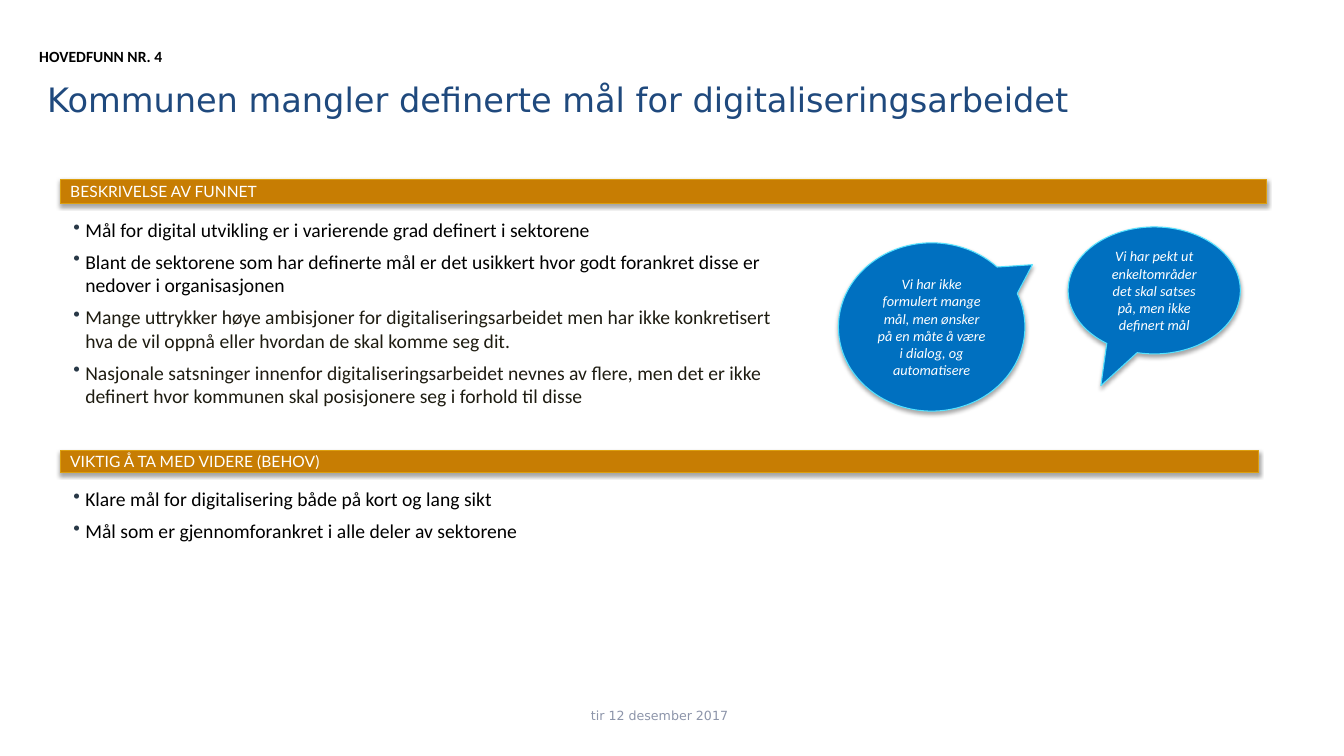
from dataclasses import dataclass

from lxml.etree import SubElement
from pptx import Presentation
from pptx.dml.color import RGBColor
from pptx.enum.shapes import MSO_SHAPE as Preset
from pptx.enum.text import MSO_ANCHOR as Anchor, MSO_AUTO_SIZE as AutoSize, PP_ALIGN as Align
from pptx.oxml.ns import qn
from pptx.util import Cm, Pt


@dataclass(frozen=True)
class Theme:
    heading_font: str = "DejaVu Sans"
    body_font: str = "Calibri"
    bar_font: str = "Lato"
    title_size: float = 24
    body_size: float = 14
    label_size: float = 11.1
    quote_size: float = 10.2
    date_size: float = 9
    navy: str = "1F497D"
    grey: str = "8D95AA"
    black: str = "000000"
    charcoal: str = "1E1C11"
    white: str = "FFFFFF"
    bullet: str = "293947"
    amber: str = "C77D03"
    amber_edge: str = "DC9F10"
    blue: str = "0070C0"
    cyan_edge: str = "55E2FF"


THEME = Theme()


def rgb(color):
    return RGBColor.from_string(color)


def write(paragraph, wording, font, size, color, bold=False, italic=False):
    run = paragraph.add_run()
    run.text = wording
    run.font.name = font
    run.font.size = Pt(size)
    run.font.color.rgb = rgb(color)
    run.font.bold = bold
    run.font.italic = italic


def add_frame(slide, box, anchor=Anchor.TOP, grow=False):
    frame = slide.shapes.add_textbox(*map(Cm, box)).text_frame
    frame.word_wrap = True
    frame.vertical_anchor = anchor
    frame.auto_size = AutoSize.SHAPE_TO_FIT_TEXT if grow else AutoSize.NONE
    return frame


def add_bullets(slide, box, points):
    frame = add_frame(slide, box, grow=True)
    for index, (wording, color) in enumerate(points):
        paragraph = frame.add_paragraph() if index else frame.paragraphs[0]
        props = paragraph._p.get_or_add_pPr()
        props.set("marL", str(Cm(0.3)))
        props.set("indent", str(-Cm(0.3)))
        SubElement(SubElement(props, qn("a:buClr")), qn("a:srgbClr"), val=THEME.bullet)
        SubElement(props, qn("a:buChar"), char="•")
        if index:
            paragraph.space_before = Pt(6)
        write(paragraph, wording, THEME.body_font, THEME.body_size, color)


def add_shadow(shape):
    shape.shadow.inherit = False
    effects = shape._element.spPr.find(qn("a:effectLst"))
    shadow = SubElement(effects, qn("a:outerShdw"), blurRad=str(Pt(3.1)), dist=str(Pt(1.8)),
                        dir="5400000", rotWithShape="0")
    tint = SubElement(shadow, qn("a:srgbClr"), val=THEME.black)
    SubElement(tint, qn("a:alpha"), val="35000")


def add_panel(slide, preset, box, fill, edge, align):
    panel = slide.shapes.add_shape(preset, *map(Cm, box))
    panel.fill.solid()
    panel.fill.fore_color.rgb = rgb(fill)
    panel.line.color.rgb = rgb(edge)
    panel.line.width = Pt(0.75)
    add_shadow(panel)
    frame = panel.text_frame
    frame.word_wrap = True
    frame.vertical_anchor = Anchor.MIDDLE
    frame.paragraphs[0].alignment = align
    return panel


def add_bar(slide, box, heading):
    bar = add_panel(slide, Preset.RECTANGLE, box, THEME.amber, THEME.amber_edge, Align.LEFT)
    write(bar.text_frame.paragraphs[0], heading, THEME.bar_font, THEME.label_size, THEME.white)


def add_quote(slide, box, tip, wording):
    bubble = add_panel(slide, Preset.OVAL_CALLOUT, box, THEME.blue, THEME.cyan_edge, Align.CENTER)
    for index, offset in enumerate(tip):
        bubble.adjustments[index] = offset
    write(bubble.text_frame.paragraphs[0], wording, THEME.body_font, THEME.quote_size,
          THEME.white, italic=True)


def main():
    deck = Presentation()
    deck.slide_width, deck.slide_height = Cm(33.87), Cm(19.05)
    slide = deck.slides.add_slide(deck.slide_layouts[6])

    title = add_frame(slide, (0.94, 0.91, 26.39, 3.18), Anchor.MIDDLE).paragraphs[0]
    write(title, "Kommunen mangler definerte mål for digitaliseringsarbeidet",
          THEME.heading_font, THEME.title_size, THEME.navy)

    date = add_frame(slide, (12.67, 17.53, 7.9, 1.02), Anchor.MIDDLE).paragraphs[0]
    date.alignment = Align.CENTER
    write(date, "tir 12 desember 2017", THEME.heading_font, THEME.date_size, THEME.grey)

    add_bar(slide, (1.52, 4.52, 30.4, 0.61), "BESKRIVELSE AV FUNNET")
    add_bar(slide, (1.52, 11.35, 30.2, 0.56), "VIKTIG Å TA MED VIDERE (BEHOV)")

    add_quote(slide, (26.92, 5.72, 4.34, 3.2), (-0.31, 0.75),
              "Vi har pekt ut enkeltområder det skal satses på, men ikke definert mål")
    add_quote(slide, (21.13, 6.12, 4.7, 4.24), (0.54, -0.37),
              "Vi har ikke formulert mange mål, men ønsker på en måte å være i dialog, "
              "og automatisere")

    add_bullets(slide, (1.6, 5.36, 18.21, 5.08), [
        ("Mål for digital utvikling er i varierende grad definert i sektorene", THEME.black),
        ("Blant de sektorene som har definerte mål er det usikkert hvor godt forankret disse er "
         "nedover i organisasjonen", THEME.black),
        ("Mange uttrykker høye ambisjoner for digitaliseringsarbeidet men har ikke konkretisert "
         "hva de vil oppnå eller hvordan de skal komme seg dit.", THEME.charcoal),
        ("Nasjonale satsninger innenfor digitaliseringsarbeidet nevnes av flere, men det er ikke "
         "definert hvor kommunen skal posisjonere seg i forhold til disse", THEME.charcoal),
    ])
    add_bullets(slide, (1.6, 12.14, 29.85, 1.68), [
        ("Klare mål for digitalisering både på kort og lang sikt", THEME.black),
        ("Mål som er gjennomforankret i alle deler av sektorene", THEME.black),
    ])

    label = add_frame(slide, (0.74, 1.07, 4.62, 0.74), grow=True).paragraphs[0]
    write(label, "HOVEDFUNN NR. 4", THEME.body_font, THEME.label_size, THEME.black, bold=True)

    deck.save("out.pptx")


if __name__ == "__main__":
    main()
